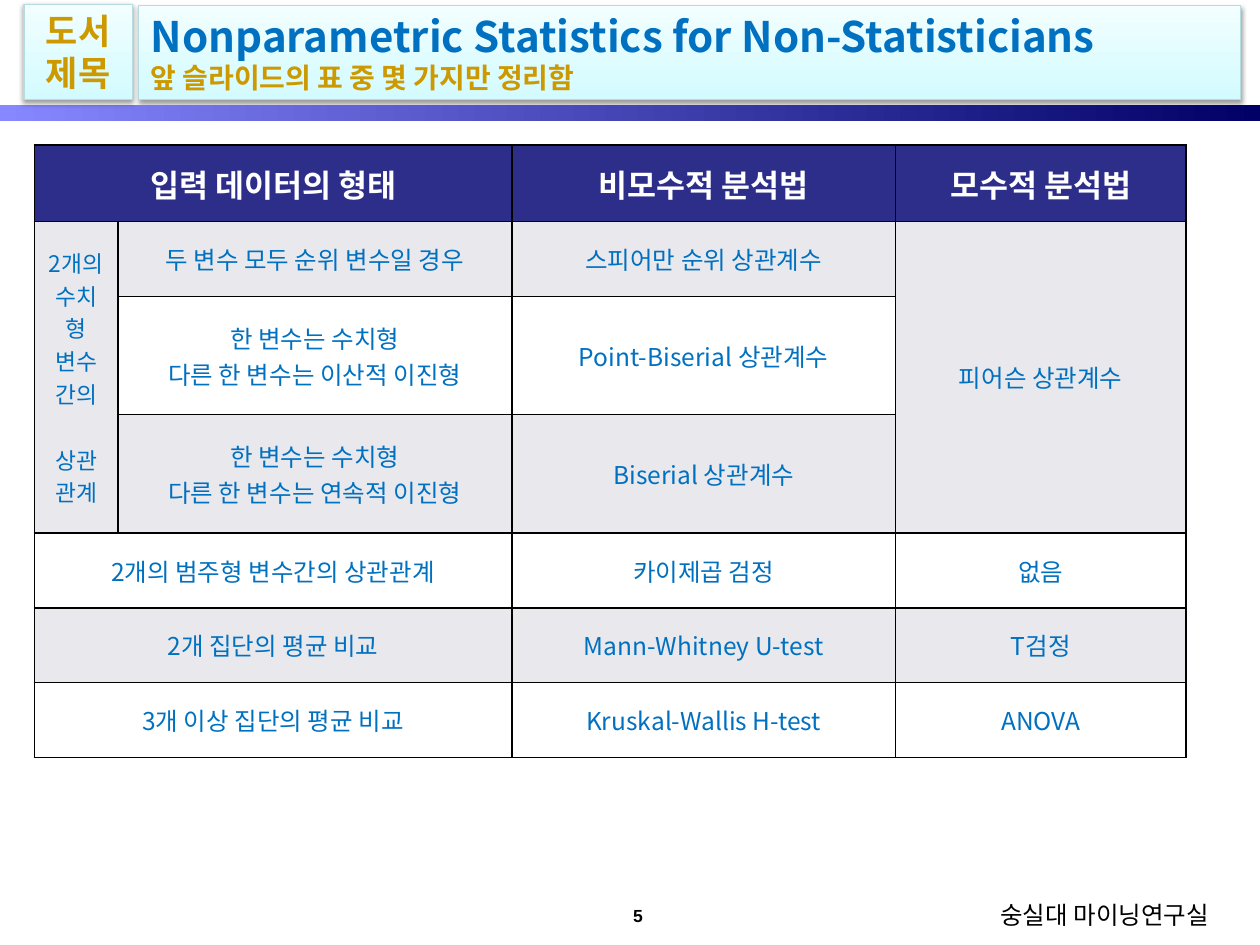
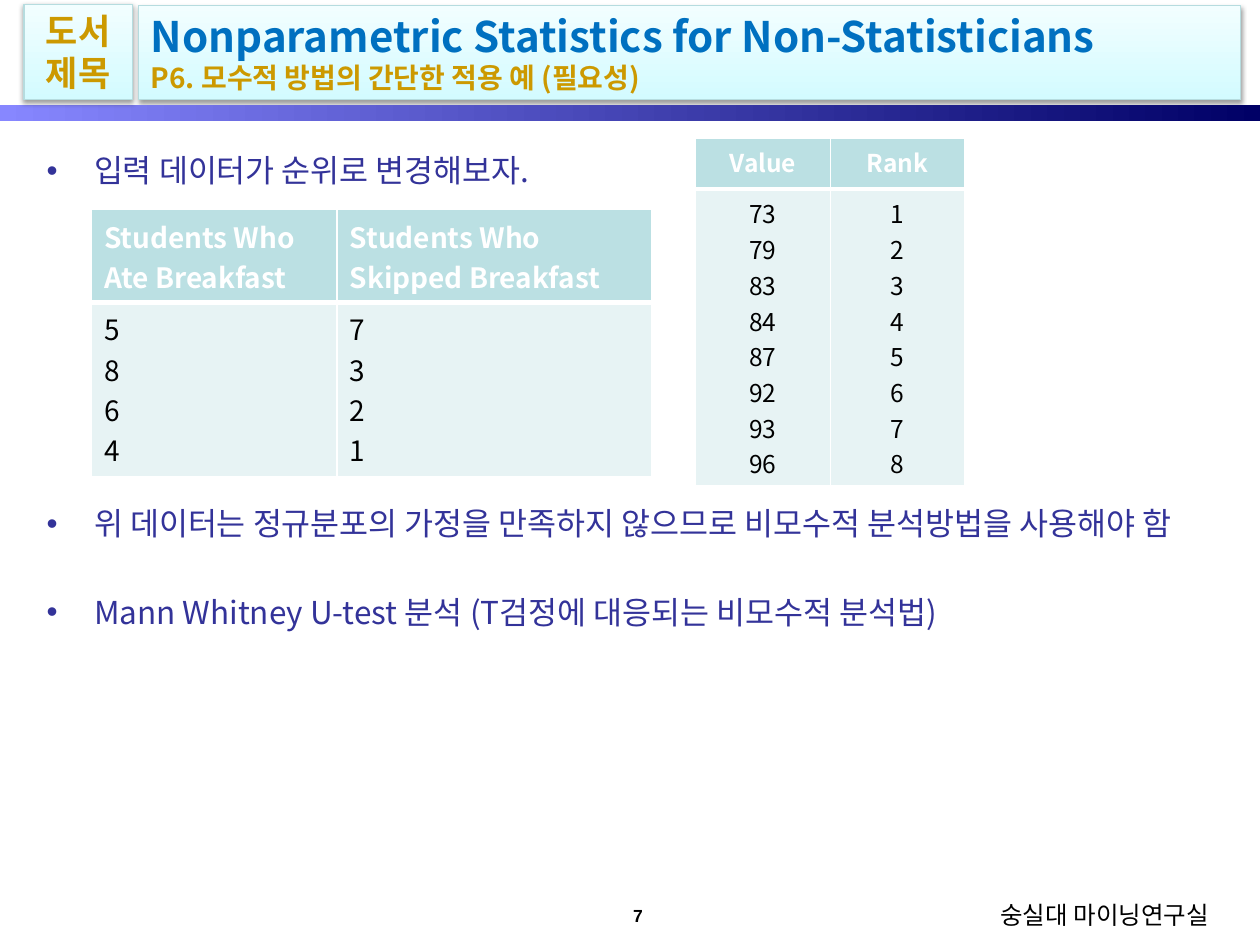
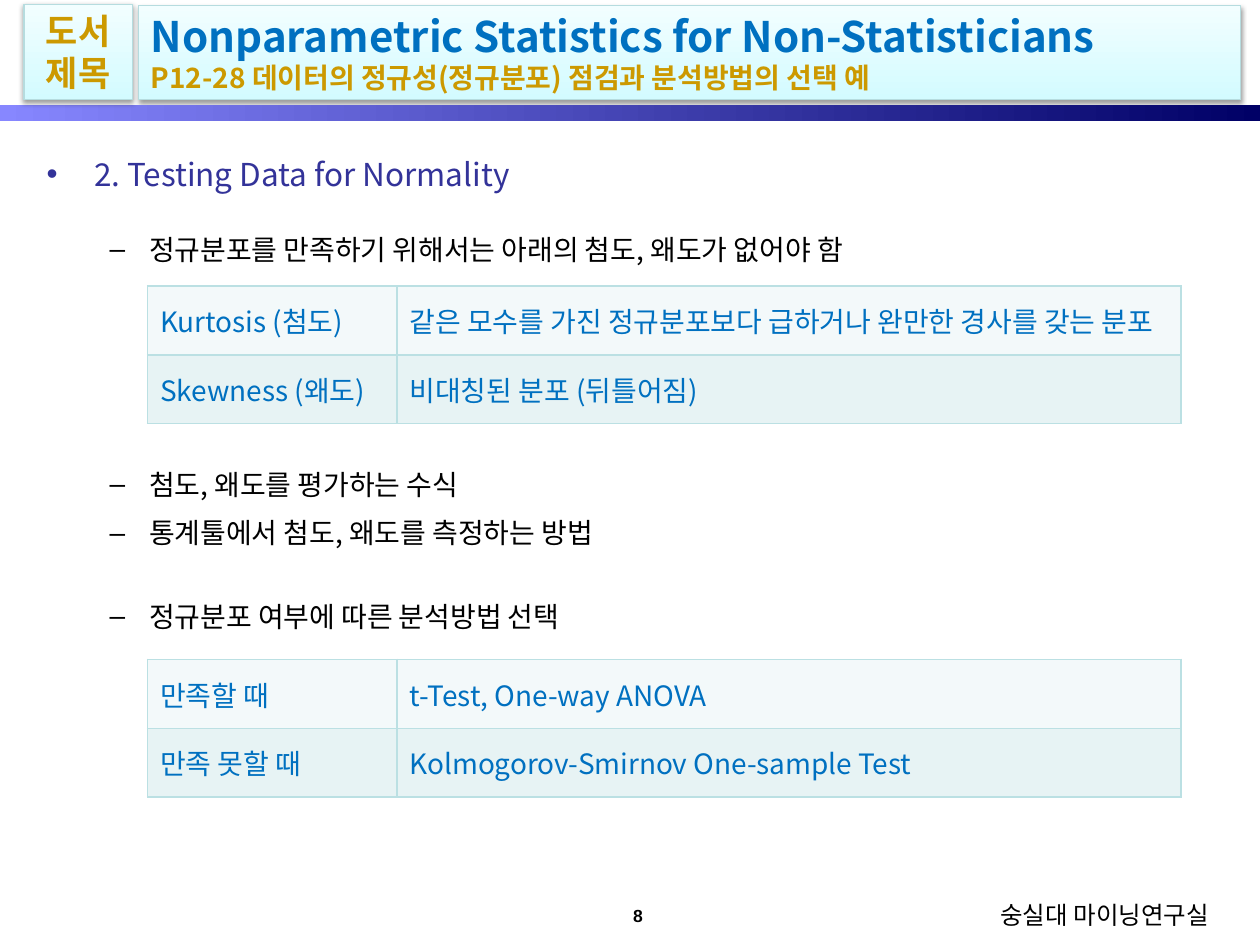
from dataclasses import dataclass

from lxml.etree import SubElement
from pptx import Presentation
from pptx.dml.color import RGBColor
from pptx.enum.shapes import MSO_SHAPE
from pptx.enum.text import MSO_ANCHOR, MSO_AUTO_SIZE, PP_ALIGN
from pptx.oxml import parse_xml
from pptx.oxml.ns import nsdecls, qn
from pptx.util import Pt


@dataclass(frozen=True)
class Theme:
    font: str = "Noto Sans CJK KR"
    number_font: str = "Arial"
    black: str = "000000"
    white: str = "FFFFFF"
    blue: str = "0070C0"
    gold: str = "CC9900"
    indigo: str = "333399"
    navy: str = "2D2D8A"
    gray: str = "E8E8ED"
    teal: str = "BBE0E3"
    teal_light: str = "E7F3F4"
    teal_pale: str = "F3F9FA"
    card_line: str = "B6DCDF"
    card_stops: tuple = ("D3FBFF", "F2FEFF")
    band_stops: tuple = ("8787FF", "000066")
    title: int = 24
    tag: int = 20
    heading: int = 18
    text: int = 16
    small: int = 14
    narrow: int = 13
    number: int = 10


theme = Theme()


def write(frame, text, size=theme.text, color=theme.black, bold=False, font=theme.font,
          align=PP_ALIGN.LEFT, before=0, level=0):
    first = frame.paragraphs[0]
    para = frame.add_paragraph() if first.runs else first
    para.level = level
    para.alignment = align
    para.space_before = Pt(before)
    span = para.add_run()
    span.text = text
    span.font.size = Pt(size)
    span.font.bold = bold
    span.font.color.rgb = RGBColor.from_string(color)
    span.font.name = font
    span.font._element.set("kern", "0")
    SubElement(span.font._element, qn("a:ea")).set("typeface", font)


def add_grid(page, rows, left, top, widths, heights, fills, border, merges=(), header=None,
             anchor=MSO_ANCHOR.MIDDLE, header_rule=1, **text_format):
    table = page.shapes.add_table(len(rows), len(widths), Pt(left), Pt(top),
                                  Pt(sum(widths)), Pt(sum(heights))).table
    table.horz_banding = False
    table.first_row = header is not None
    for column, width in zip(table.columns, widths):
        column.width = Pt(width)
    for index, (values, height, fill) in enumerate(zip(rows, heights, fills)):
        table.rows[index].height = Pt(height)
        cell_format = {**text_format, **(header or {})} if index == 0 else text_format
        for cell, value in zip(table.rows[index].cells, values):
            cell.vertical_anchor = anchor
            for side in "LRTB":
                thick = (index, side) in ((0, "B"), (1, "T"))
                weight = Pt(header_rule if thick else 1)
                cell._tc.get_or_add_tcPr().append(parse_xml(
                    f'<a:ln{side} {nsdecls("a")} w="{weight}"><a:solidFill>'
                    f'<a:srgbClr val="{border}"/></a:solidFill></a:ln{side}>'))
            cell.fill.solid()
            cell.fill.fore_color.rgb = RGBColor.from_string(fill)
            for line in value.split("\n") if value else ():
                write(cell.text_frame, line, **cell_format)
    for start, end in merges:
        table.cell(*start).merge(table.cell(*end))
    return table


deck = Presentation()
deck.slide_width, deck.slide_height = Pt(720), Pt(540)

pages = []
for layout, number, subtitle in (
    (5, "5", "앞 슬라이드의 표 중 몇 가지만 정리함"),
    (1, "7", "P6. 모수적 방법의 간단한 적용 예 (필요성)"),
    (1, "8", "P12-28 데이터의 정규성(정규분포) 점검과 분석방법의 선택 예"),
):
    page = deck.slides.add_slide(deck.slide_layouts[layout])
    pages.append(page)

    band = page.shapes.add_shape(MSO_SHAPE.RECTANGLE, 0, Pt(60), Pt(720), Pt(9.2))
    band.shadow.inherit = False
    band.line.fill.background()

    title = page.shapes.title
    title.left, title.top, title.width, title.height = Pt(79), Pt(3), Pt(630), Pt(54)
    tag = page.shapes.add_shape(MSO_SHAPE.RECTANGLE, Pt(13.7), Pt(2.4), Pt(62), Pt(54.6))

    for box, stops, angle in ((band, theme.band_stops, 0), (title, theme.card_stops, 90),
                              (tag, theme.card_stops, 90)):
        box.fill.gradient()
        box.fill.gradient_angle = angle
        for stop, color, position in zip(box.fill.gradient_stops, stops, (0, 1)):
            stop.color.rgb = RGBColor.from_string(color)
            stop.position = position

    for card in (title, tag):
        card.line.color.rgb = RGBColor.from_string(theme.card_line)
        card.line.width = Pt(0.75)
        card._element.spPr.append(parse_xml(
            f'<a:effectLst {nsdecls("a")}><a:outerShdw blurRad="{Pt(3.1)}" dist="{Pt(1.6)}" '
            f'dir="5400000" rotWithShape="0"><a:srgbClr val="{theme.black}">'
            '<a:alpha val="38000"/></a:srgbClr></a:outerShdw></a:effectLst>'))
        card.text_frame.word_wrap = True
        card.text_frame.auto_size = MSO_AUTO_SIZE.NONE
        card.text_frame.vertical_anchor = MSO_ANCHOR.MIDDLE

    write(title.text_frame, "Nonparametric Statistics for Non-Statisticians",
          size=theme.title, color=theme.blue, bold=True)
    write(title.text_frame, subtitle, color=theme.gold, bold=True)
    write(tag.text_frame, "도서제목", size=theme.tag, color=theme.gold, bold=True,
          align=PP_ALIGN.CENTER)

    number_box = page.shapes.add_textbox(Pt(331.5), Pt(513.5), Pt(66), Pt(22))
    number_box.text_frame.word_wrap = True
    write(number_box.text_frame, number, size=theme.number, bold=True,
          font=theme.number_font, align=PP_ALIGN.CENTER)

    footer = page.shapes.add_textbox(Pt(564.5), Pt(513.5), Pt(142), Pt(18))
    footer.fill.solid()
    footer.fill.fore_color.rgb = RGBColor.from_string(theme.white)
    footer.text_frame.word_wrap = True
    footer.text_frame.vertical_anchor = MSO_ANCHOR.MIDDLE
    write(footer.text_frame, "숭실대 마이닝연구실", size=theme.small)

summary_page, ranks_page, normality_page = pages

methods = add_grid(
    summary_page,
    [
        ["입력 데이터의 형태", None, "비모수적 분석법", "모수적 분석법"],
        [None, "두 변수 모두 순위 변수일 경우", "스피어만 순위 상관계수", "피어슨 상관계수"],
        [None, "한 변수는 수치형\n다른 한 변수는 이산적 이진형", "Point-Biserial 상관계수", None],
        [None, "한 변수는 수치형\n다른 한 변수는 연속적 이진형", "Biserial 상관계수", None],
        ["2개의 범주형 변수간의 상관관계", None, "카이제곱 검정", "없음"],
        ["2개 집단의 평균 비교", None, "Mann-Whitney U-test", "T검정"],
        ["3개 이상 집단의 평균 비교", None, "Kruskal-Wallis H-test", "ANOVA"],
    ],
    19.6, 82.9, [47.8, 225.2, 219.2, 166], [43.7, 42.8, 67.6, 67.6, 42.8, 42.8, 42.8],
    [theme.navy] + [theme.gray, theme.white] * 3, theme.black,
    merges=[((0, 0), (0, 1)), ((1, 0), (3, 0)), ((1, 3), (3, 3))]
    + [((row, 0), (row, 1)) for row in (4, 5, 6)],
    header={"size": theme.heading, "color": theme.white, "bold": True},
    size=theme.small, color=theme.blue, align=PP_ALIGN.CENTER,
)
for line, before in (("2개의", 0), ("수치형", 0), ("변수", 0), ("간의", 0),
                     ("상관", 19), ("관계", 0)):
    write(methods.cell(1, 0).text_frame, line, size=theme.narrow, color=theme.blue,
          align=PP_ALIGN.CENTER, before=before)

main_point = {"size": theme.heading, "color": theme.indigo}
for page, top, margin, lines in (
    (ranks_page, 82.8, 3.6, [
        ("입력 데이터가 순위로 변경해보자.", 0, 0),
        ("위 데이터는 정규분포의 가정을 만족하지 않으므로 비모수적 분석방법을 사용해야 함", 0, 180.2),
        ("Mann Whitney U-test 분석 (T검정에 대응되는 비모수적 분석법)", 0, 28.8),
    ]),
    (normality_page, 78.5, 10, [
        ("2. Testing Data for Normality", 0, 0),
        ("정규분포를 만족하기 위해서는 아래의 첨도, 왜도가 없어야 함", 1, 22.6),
        ("첨도, 왜도를 평가하는 수식", 1, 115),
        ("통계툴에서 첨도, 왜도를 측정하는 방법", 1, 8.8),
        ("정규분포 여부에 따른 분석방법 선택", 1, 28.3),
    ]),
):
    body = page.placeholders[1]
    body.left, body.top, body.width, body.height = Pt(19.5), Pt(top), Pt(675), Pt(400)
    body.text_frame.auto_size = MSO_AUTO_SIZE.NONE
    body.text_frame.margin_top = Pt(margin)
    for text, level, before in lines:
        write(body.text_frame, text, level=level, before=before,
              **({} if level else main_point))

for rows, left, top, widths, heights, size, align in (
    ([["Value", "Rank"], ["73\n79\n83\n84\n87\n92\n93\n96", "1\n2\n3\n4\n5\n6\n7\n8"]],
     397.5, 78.8, [77, 77], [29.2, 169.8], theme.small, PP_ALIGN.CENTER),
    ([["Students Who Ate Breakfast", "Students Who Skipped Breakfast"],
      ["5\n8\n6\n4", "7\n3\n2\n1"]],
     52.3, 119.8, [140.4, 180], [53, 99.5], theme.text, PP_ALIGN.LEFT),
):
    add_grid(ranks_page, rows, left, top, widths, heights,
             [theme.teal, theme.teal_light], theme.white,
             header={"color": theme.white, "bold": True}, header_rule=3,
             anchor=MSO_ANCHOR.TOP, size=size, align=align)

for top, rows in (
    (163.4, [["Kurtosis (첨도)", "같은 모수를 가진 정규분포보다 급하거나 완만한 경사를 갖는 분포"],
             ["Skewness (왜도)", "비대칭된 분포 (뒤틀어짐)"]]),
    (376.8, [["만족할 때", "t-Test, One-way ANOVA"],
             ["만족 못할 때", "Kolmogorov-Smirnov One-sample Test"]]),
):
    add_grid(normality_page, rows, 84.4, top, [142.5, 448], [39.4, 39.4],
             [theme.teal_pale, theme.teal_light], theme.teal, color=theme.blue)

deck.save("out.pptx")
